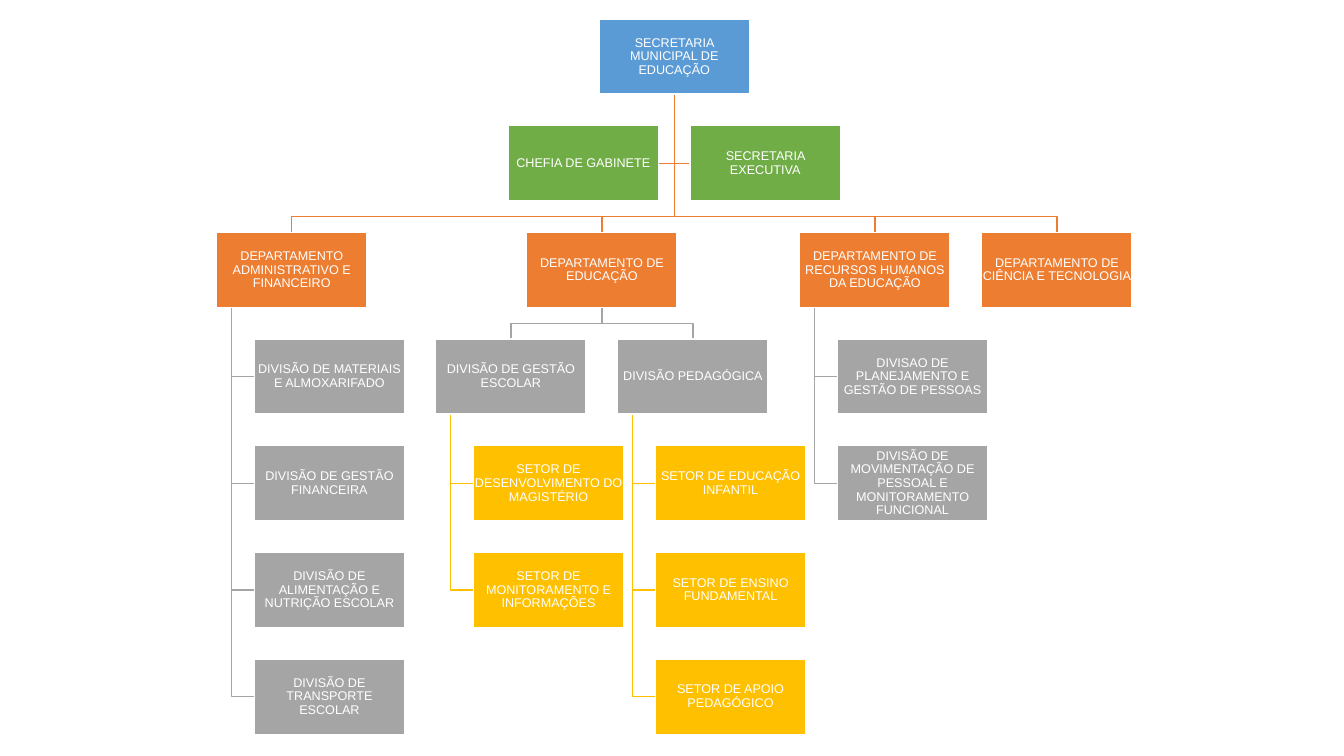
from dataclasses import dataclass, field

from pptx import Presentation
from pptx.dml.color import RGBColor
from pptx.enum import shapes, text
from pptx.util import Pt

COLORS = {
    "secretariat": "5B9BD5",
    "assistant": "70AD47",
    "department": "ED7D31",
    "division": "A5A5A5",
    "sector": "FFC000",
    "white": "FFFFFF",
}
BOX_W, BOX_H = 107.4, 53.7
TOP, ROW_STEP = 13.6, 76.2
GAP = ROW_STEP - BOX_H
HANG_INDENT = 26.9
TRUNK_INSET = BOX_W / 10
SLOT = 130


@dataclass
class Unit:
    name: str
    kind: str
    left: float = 0
    row: int = 0
    children: list = field(default_factory=list)

    @property
    def top(self):
        return TOP + self.row * ROW_STEP

    @property
    def bottom(self):
        return self.top + BOX_H

    @property
    def center(self):
        return self.left + BOX_W / 2

    @property
    def middle(self):
        return self.top + BOX_H / 2


def rgb(name):
    return RGBColor.from_string(COLORS[name])


def add_unit(page, unit):
    box = page.shapes.add_shape(
        shapes.MSO_SHAPE.RECTANGLE,
        Pt(unit.left), Pt(unit.top), Pt(BOX_W), Pt(BOX_H))
    box.shadow.inherit = False
    box.fill.solid()
    box.fill.fore_color.rgb = rgb(unit.kind)
    box.line.color.rgb = rgb("white")
    box.line.width = Pt(1)

    frame = box.text_frame
    frame.word_wrap = True
    frame.vertical_anchor = text.MSO_ANCHOR.MIDDLE
    frame.margin_left = frame.margin_right = Pt(0.45)
    frame.margin_top = frame.margin_bottom = Pt(0.45)
    para = frame.paragraphs[0]
    para.alignment = text.PP_ALIGN.CENTER
    para.line_spacing = 0.9
    span = para.add_run()
    span.text = unit.name
    span.font.name = "Arial"
    span.font.size = Pt(9)
    span.font.color.rgb = rgb("white")


def add_branch(page, points, color):
    """Draw an open angled line through the points."""
    start, *rest = [(Pt(x), Pt(y)) for x, y in points]
    builder = page.shapes.build_freeform(*start)
    builder.add_line_segments(rest, close=False)
    branch = builder.convert_to_shape()
    branch.shadow.inherit = False
    branch.fill.background()
    branch.line.color.rgb = rgb(color)
    branch.line.width = Pt(1)


def branch_points(parent, child):
    """Route by the child's place: beside the trunk, hanging or spread."""
    if child.kind == "assistant":
        edge = child.left + (BOX_W if child.left < parent.left else 0)
        return [(parent.center, parent.bottom),
                (parent.center, child.middle), (edge, child.middle)]
    if 0 < child.left - parent.left < SLOT / 4:
        trunk = parent.left + TRUNK_INSET
        return [(trunk, parent.bottom),
                (trunk, child.middle), (child.left, child.middle)]
    bus = child.top - GAP / 2
    return [(parent.center, parent.bottom), (parent.center, bus),
            (child.center, bus), (child.center, child.top)]


def hang(parent, kind, names):
    """Stack child units below the parent, indented."""
    parent.children = [
        Unit(name, kind, parent.left + HANG_INDENT, parent.row + step)
        for step, name in enumerate(names, 1)]
    return parent


def beside(parent, kind, names):
    """Place two units half a slot to each side of the parent, one row down."""
    return [Unit(name, kind, parent.left + side * SLOT / 2, parent.row + 1)
            for name, side in zip(names, (-1, 1))]


def build_chart():
    root = Unit("SECRETARIA MUNICIPAL DE EDUCAÇÃO", "secretariat", 427.9)
    assistants = beside(root, "assistant",
                        ["CHEFIA DE GABINETE", "SECRETARIA EXECUTIVA"])
    finance, education, staff, science = [
        Unit(name, "department", left, 2) for name, left in [
            ("DEPARTAMENTO ADMINISTRATIVO E FINANCEIRO", 154.7),
            ("DEPARTAMENTO DE EDUCAÇÃO", 376.2),
            ("DEPARTAMENTO DE RECURSOS HUMANOS DA EDUCAÇÃO", 571.2),
            ("DEPARTAMENTO DE CIÊNCIA E TECNOLOGIA", 701.2),
        ]]
    root.children = assistants + [finance, education, staff, science]

    hang(finance, "division", [
        "DIVISÃO DE MATERIAIS E ALMOXARIFADO",
        "DIVISÃO DE GESTÃO FINANCEIRA",
        "DIVISÃO DE ALIMENTAÇÃO E NUTRIÇÃO ESCOLAR",
        "DIVISÃO DE TRANSPORTE ESCOLAR",
    ])
    hang(staff, "division", [
        "DIVISAO DE PLANEJAMENTO E GESTÃO DE PESSOAS",
        "DIVISÃO DE MOVIMENTAÇÃO DE PESSOAL E MONITORAMENTO FUNCIONAL",
    ])
    education.children = beside(
        education, "division",
        ["DIVISÃO DE GESTÃO ESCOLAR", "DIVISÃO PEDAGÓGICA"])
    management, pedagogy = education.children
    hang(management, "sector", [
        "SETOR DE DESENVOLVIMENTO DO MAGISTÉRIO",
        "SETOR DE MONITORAMENTO E INFORMAÇÕES",
    ])
    hang(pedagogy, "sector", [
        "SETOR DE EDUCAÇÃO INFANTIL",
        "SETOR DE ENSINO FUNDAMENTAL",
        "SETOR DE APOIO PEDAGÓGICO",
    ])
    return root


def walk(unit):
    yield unit
    for child in unit.children:
        yield from walk(child)


def main():
    deck = Presentation()
    deck.slide_width, deck.slide_height = Pt(960), Pt(540)
    page = deck.slides.add_slide(deck.slide_layouts.get_by_name("Blank"))

    units = list(walk(build_chart()))
    for parent in units:
        for child in parent.children:
            color = "department" if child.kind == "assistant" else child.kind
            add_branch(page, branch_points(parent, child), color)
    for unit in units:
        add_unit(page, unit)

    deck.save("out.pptx")


if __name__ == "__main__":
    main()
